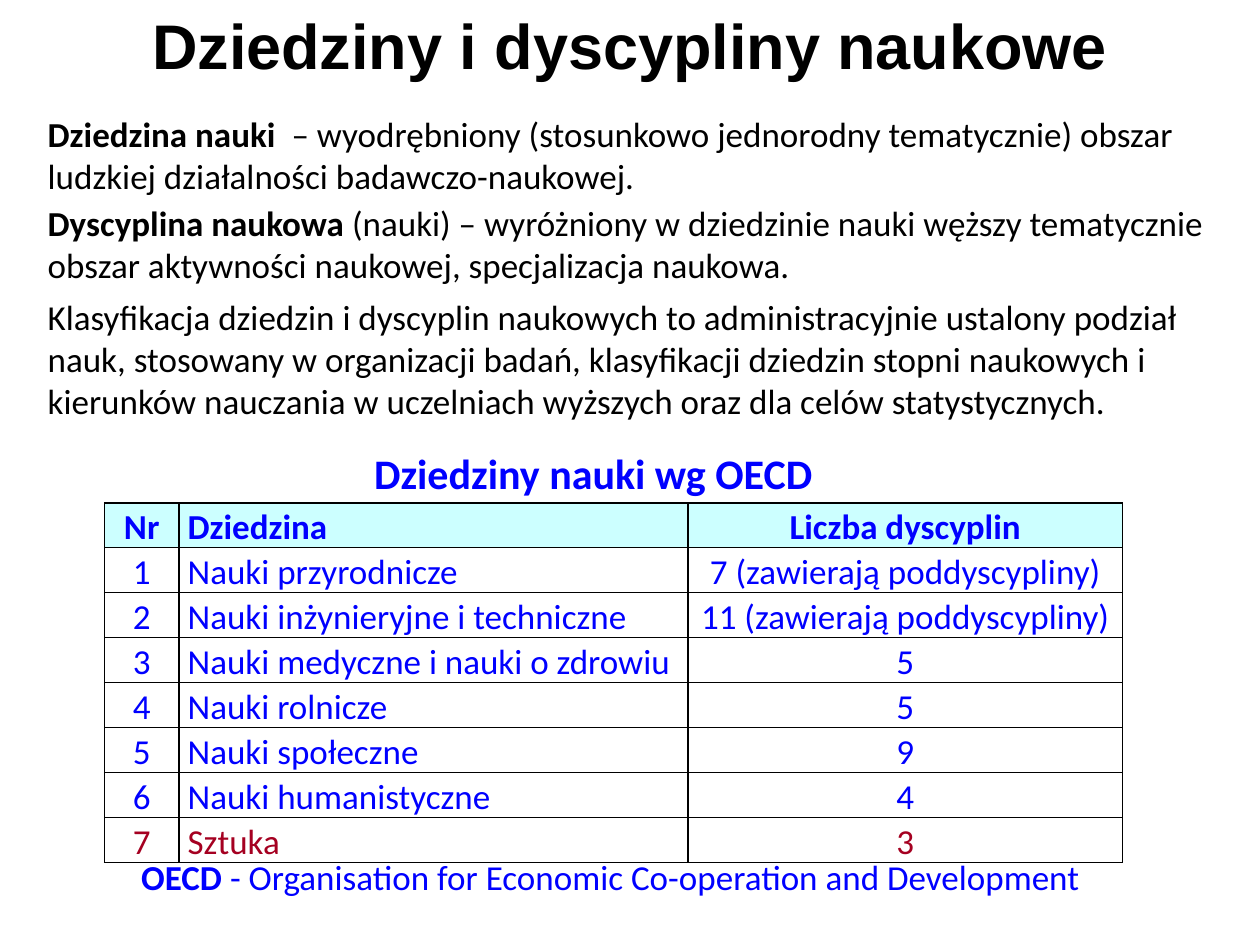
from lxml.etree import SubElement
from pptx import Presentation
from pptx.dml.color import RGBColor
from pptx.enum.text import MSO_ANCHOR, PP_ALIGN
from pptx.oxml.ns import qn
from pptx.util import Inches, Pt

BLACK, BLUE, RED, CYAN = "000000", "0000FF", "A50021", "CCFFFF"

TITLE = "Dziedziny i dyscypliny naukowe"
DEFINITIONS = [
    (0, [("Dziedzina nauki", True),
         ("  – wyodrębniony (stosunkowo jednorodny tematycznie) obszar ludzkiej "
          "działalności badawczo-naukowej.", False)]),
    (3, [("Dyscyplina naukowa ", True),
         ("(nauki) – wyróżniony w dziedzinie nauki węższy tematycznie obszar "
          "aktywności naukowej, specjalizacja naukowa.", False)]),
    (6, [("Klasyfikacja dziedzin i dyscyplin naukowych to administracyjnie ustalony "
          "podział nauk, stosowany w organizacji badań, klasyfikacji dziedzin stopni "
          "naukowych i kierunków nauczania w uczelniach wyższych oraz dla celów "
          "statystycznych.", False)]),
]
HEADING = "Dziedziny nauki wg OECD"
HEADER = ["Nr", "Dziedzina", "Liczba dyscyplin"]
FIELDS = [
    ("Nauki przyrodnicze", "7 (zawierają poddyscypliny)"),
    ("Nauki inżynieryjne i techniczne", "11 (zawierają poddyscypliny)"),
    ("Nauki medyczne i nauki o zdrowiu", "5"),
    ("Nauki rolnicze", "5"),
    ("Nauki społeczne", "9"),
    ("Nauki humanistyczne", "4"),
    ("Sztuka", "3"),
]
FOOTNOTE = [("OECD", True),
            (" - Organisation for Economic Co-operation and Development", False)]
COLUMN_WIDTHS = [0.59, 4.04, 3.45]


def rgb(value):
    """Turn a hex string into a colour."""
    return RGBColor.from_string(value)


def add_span(para, text, size, color, bold, font="Calibri"):
    """Add one formatted run to a paragraph."""
    span = para.add_run()
    span.text = text
    span.font.name = font
    span.font.size = Pt(size)
    span.font.bold = bold
    span.font.color.rgb = rgb(color)


def add_frame(page, box, anchor=MSO_ANCHOR.TOP):
    """Add a wrapping text box and return its text frame."""
    frame = page.shapes.add_textbox(*map(Inches, box)).text_frame
    frame.word_wrap = True
    frame.vertical_anchor = anchor
    return frame


def add_line(page, box, spans, size, color, align, font="Calibri", anchor=MSO_ANCHOR.TOP):
    """Add a text box that holds a single paragraph."""
    para = add_frame(page, box, anchor).paragraphs[0]
    para.alignment = align
    for text, bold in spans:
        add_span(para, text, size, color, bold, font)


def add_definitions(page, box):
    """Add the three defining paragraphs."""
    frame = add_frame(page, box)
    for index, (space, spans) in enumerate(DEFINITIONS):
        para = frame.add_paragraph() if index else frame.paragraphs[0]
        para.space_before = Pt(space)
        for text, bold in spans:
            add_span(para, text, 20, BLACK, bold)


def add_borders(cell):
    """Draw a thin black line on every side of a cell."""
    properties = cell._tc.get_or_add_tcPr()
    for side in ("a:lnL", "a:lnR", "a:lnT", "a:lnB"):
        line = SubElement(properties, qn(side), w=str(Pt(1)))
        fill = SubElement(line, qn("a:solidFill"))
        SubElement(fill, qn("a:srgbClr"), val=BLACK)


def fill_cell(cell, text, color, bold, align, background):
    """Set the text, borders and fill of a cell."""
    cell.margin_left = cell.margin_right = Inches(0.07)
    cell.margin_top = cell.margin_bottom = 0
    para = cell.text_frame.paragraphs[0]
    para.alignment = align
    para.line_spacing = 1.07
    add_span(para, text, 20, color, bold)
    add_borders(cell)
    if background:
        cell.fill.solid()
        cell.fill.fore_color.rgb = rgb(background)
    else:
        cell.fill.background()


def add_field_table(page, box):
    """Add the table of fields and their numbers of disciplines."""
    rows = [HEADER] + [(str(number), *field) for number, field in enumerate(FIELDS, 1)]
    table = page.shapes.add_table(len(rows), len(HEADER), *map(Inches, box)).table
    table.first_row = table.horz_banding = False
    for column, width in zip(table.columns, COLUMN_WIDTHS):
        column.width = Inches(width)
    for row, texts in enumerate(rows):
        is_header = row == 0
        color = RED if row == len(FIELDS) else BLUE
        for column, text in enumerate(texts):
            align = PP_ALIGN.LEFT if column == 1 else PP_ALIGN.CENTER
            fill_cell(table.cell(row, column), text, color, is_header, align,
                      CYAN if is_header else None)


def main():
    """Build and save the deck."""
    deck = Presentation()
    deck.slide_width, deck.slide_height = Inches(10), Inches(7.5)
    page = deck.slides.add_slide(deck.slide_layouts[6])
    add_line(page, (0, 0, 10, 0.71), [(TITLE, True)], 36, BLACK, PP_ALIGN.CENTER,
             "Arial", MSO_ANCHOR.MIDDLE)
    add_definitions(page, (0.28, 0.84, 9.45, 2.63))
    add_field_table(page, (0.83, 3.99, 8.08, 2.85))
    add_line(page, (2.87, 3.5, 3.88, 0.5), [(HEADING, True)], 24, BLUE, PP_ALIGN.LEFT)
    add_line(page, (0.75, 6.74, 8.19, 0.44), FOOTNOTE, 20, BLUE, PP_ALIGN.CENTER)
    deck.save("out.pptx")


if __name__ == "__main__":
    main()
